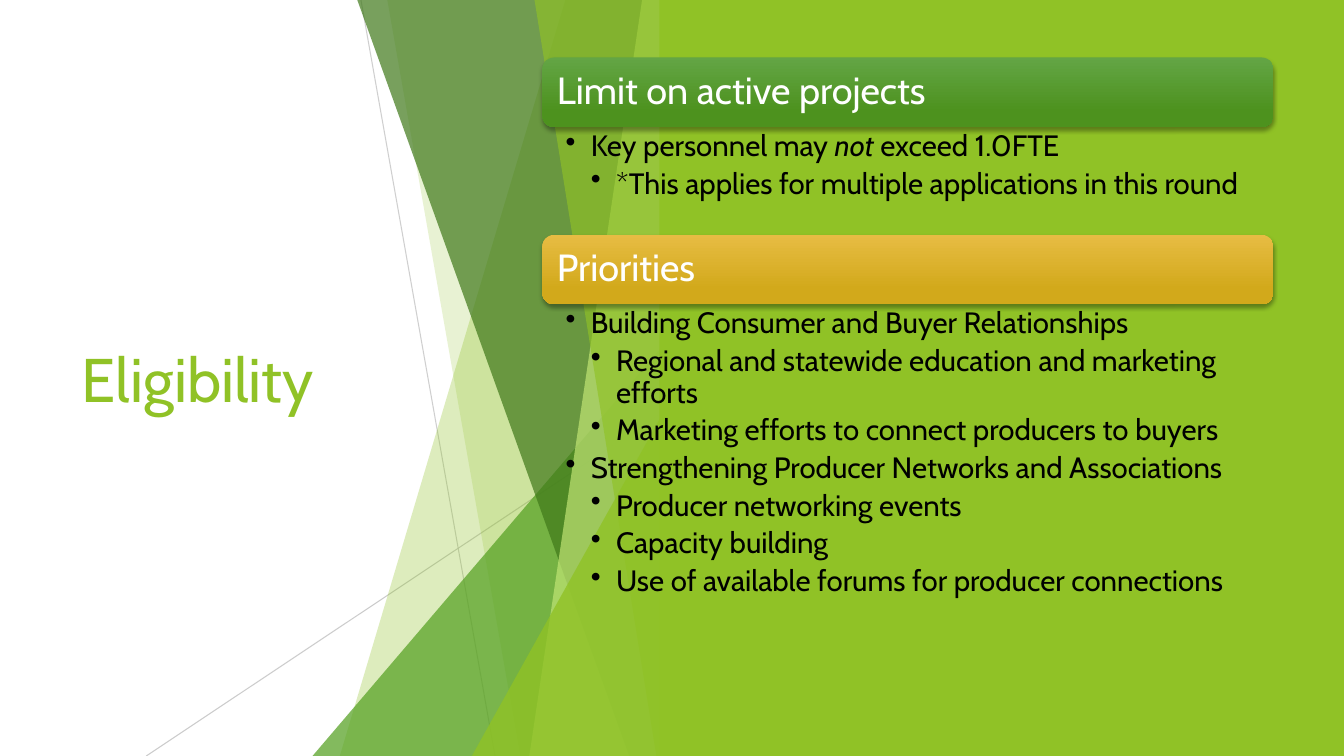
from dataclasses import dataclass

from lxml import etree
from pptx import Presentation
from pptx import util as u
from pptx.dml.color import RGBColor
from pptx.enum import shapes, text
from pptx.oxml import ns

COLOURS = {
    "lime": "90C226", "green": "54A021", "forest": "3F7819", "pale": "C0E474",
    "ray": "BFBFBF", "white": "FFFFFF", "black": "000000",
    "leaf_top": "63A545", "leaf_base": "4D921E",
    "gold_top": "E7BC43", "gold_base": "D2A91B",
}
FONT = "Cabin"
TOP, BOTTOM = -0.01, 7.5
PANEL_LEFT, PANEL_WIDTH, BAR_HEIGHT = 5.38, 7.25, 0.69


@dataclass
class Ray:
    start: tuple[float, float]
    end: tuple[float, float]
    opacity: int


@dataclass
class Facet:
    colour: str
    opacity: int
    top_left: float
    top_right: float
    bottom_right: float
    bottom_left: float


@dataclass
class Peak:
    colour: str
    opacity: int
    left: float
    top: float
    width: float


@dataclass
class Bullet:
    level: int
    wording: str
    emphasis: str = ""


@dataclass
class Section:
    heading: str
    top: float
    body_height: float
    shades: tuple[str, str]
    bullets: list[Bullet]


RAYS = [Ray((3.58, 0), (4.91, 7.5), 75), Ray((6.66, 4.03), (1.45, 7.5), 80)]
FACETS = [
    Facet("lime", 30, 5.61, 6.66, 6.66, 3.37),
    Facet("lime", 20, 3.84, 6.67, 6.67, 5.16),
    Peak("green", 72, 3.1, 3.33, 3.56),
    Facet("forest", 70, 3.54, 6.66, 6.66, 6.24),
    Facet("pale", 70, 6.37, 6.66, 6.66, 5.25),
    Facet("lime", 65, 5.3, 6.66, 6.66, 6.51),
    Peak("lime", 80, 4.68, 3.93, 1.99),
]
SECTIONS = [
    Section("Limit on active projects", 0.57, 1.07, ("leaf_top", "leaf_base"), [
        Bullet(1, "Key personnel may not exceed 1.0FTE", "not"),
        Bullet(2, "*This applies for multiple applications in this round"),
    ]),
    Section("Priorities", 2.33, 3.85, ("gold_top", "gold_base"), [
        Bullet(1, "Building Consumer and Buyer Relationships"),
        Bullet(2, "Regional and statewide education and marketing efforts"),
        Bullet(2, "Marketing efforts to connect producers to buyers"),
        Bullet(1, "Strengthening Producer Networks and Associations"),
        Bullet(2, "Producer networking events"),
        Bullet(2, "Capacity building"),
        Bullet(2, "Use of available forums for producer connections"),
    ]),
]


def rgb(name: str) -> RGBColor:
    return RGBColor.from_string(COLOURS[name])


def apply(target, values: dict) -> None:
    for key, value in values.items():
        setattr(target, key, value)


def add_node(parent, tag: str, **attributes):
    node = etree.SubElement(parent, ns.qn(tag))
    for key, value in attributes.items():
        node.set(key, str(value))
    return node


def set_opacity(element, opacity: int) -> None:
    colour = next(element.iter(ns.qn("a:srgbClr")))
    add_node(colour, "a:alpha", val=opacity * 1000)


def paint(shape, colour: str, opacity: int = 100) -> None:
    shape.shadow.inherit = False
    shape.line.fill.background()
    shape.fill.solid()
    shape.fill.fore_color.rgb = rgb(colour)
    if opacity < 100:
        set_opacity(shape.fill._xPr, opacity)


def write_run(paragraph, wording: str, size: float, colour: str, italic: bool = False) -> None:
    run = paragraph.add_run()
    run.text = wording
    apply(run.font, {"name": FONT, "size": u.Pt(size), "italic": italic})
    run.font.color.rgb = rgb(colour)


def draw_ray(slide, ray: Ray) -> None:
    ends = [u.Inches(value) for value in ray.start + ray.end]
    line = slide.shapes.add_connector(shapes.MSO_CONNECTOR.STRAIGHT, *ends)
    line.line.width = u.Pt(0.75)
    line.line.color.rgb = rgb("ray")
    properties = line._element.spPr
    set_opacity(properties, ray.opacity)
    add_node(properties, "a:effectLst")


def draw_facet(slide, facet: Facet | Peak) -> None:
    if isinstance(facet, Peak):
        box = (facet.left, facet.top, facet.width, BOTTOM - facet.top)
        shape = slide.shapes.add_shape(
            shapes.MSO_SHAPE.ISOSCELES_TRIANGLE, *map(u.Inches, box))
        shape.adjustments[0] = 1
    else:
        corners = [(facet.top_left, TOP), (facet.top_right, TOP),
                   (facet.bottom_right, BOTTOM), (facet.bottom_left, BOTTOM)]
        points = [(u.Inches(x), u.Inches(y)) for x, y in corners]
        outline = slide.shapes.build_freeform(*points[0])
        outline.add_line_segments(points[1:], close=True)
        shape = outline.convert_to_shape()
    paint(shape, facet.colour, facet.opacity)


def draw_bar(slide, section: Section) -> None:
    box = (PANEL_LEFT, section.top, PANEL_WIDTH, BAR_HEIGHT)
    bar = slide.shapes.add_shape(shapes.MSO_SHAPE.ROUNDED_RECTANGLE, *map(u.Inches, box))
    bar.shadow.inherit = False
    bar.line.fill.background()
    bar.fill.gradient()
    bar.fill.gradient_angle = 270
    for stop, position, shade in zip(bar.fill.gradient_stops, (0, 0.78), section.shades):
        stop.position = position
        stop.color.rgb = rgb(shade)
    effects = bar._element.spPr.find(ns.qn("a:effectLst"))
    shadow = add_node(effects, "a:outerShdw", blurRad=u.Pt(3), dist=u.Pt(2),
                      dir=5400000, rotWithShape=0)
    add_node(shadow, "a:srgbClr", val=COLOURS["black"])
    set_opacity(shadow, 35)
    apply(bar.text_frame, {
        "word_wrap": True, "vertical_anchor": text.MSO_ANCHOR.MIDDLE,
        "margin_left": u.Inches(0.11), "margin_right": u.Inches(0.11),
    })
    heading = bar.text_frame.paragraphs[0]
    apply(heading, {"alignment": text.PP_ALIGN.LEFT, "line_spacing": 0.9})
    write_run(heading, section.heading, 27, "white")


def draw_bullets(slide, section: Section) -> None:
    box = (PANEL_LEFT, section.top + BAR_HEIGHT, PANEL_WIDTH, section.body_height)
    frame = slide.shapes.add_textbox(*map(u.Inches, box)).text_frame
    apply(frame, {
        "word_wrap": True, "margin_left": u.Inches(0.23), "margin_right": u.Inches(0.21),
        "margin_top": u.Inches(0.04), "margin_bottom": u.Inches(0.04),
    })
    for index, bullet in enumerate(section.bullets):
        paragraph = frame.add_paragraph() if index else frame.paragraphs[0]
        apply(paragraph, {"level": bullet.level, "line_spacing": 0.9,
                          "space_after": u.Pt(4.2)})
        properties = paragraph._p.get_or_add_pPr()
        properties.set("marL", str(u.Inches(0.25 * bullet.level)))
        properties.set("indent", str(u.Inches(-0.25)))
        add_node(properties, "a:buChar", char="•")
        pieces = [bullet.wording]
        if bullet.emphasis:
            pieces = bullet.wording.partition(bullet.emphasis)
        for piece in pieces:
            write_run(paragraph, piece, 21, "black", piece == bullet.emphasis)


def main() -> None:
    deck = Presentation()
    apply(deck, {"slide_width": u.Inches(13.33), "slide_height": u.Inches(7.5)})
    slide = deck.slides.add_slide(deck.slide_layouts[5])
    title = slide.shapes.title
    apply(title, {"left": u.Inches(0.71), "top": u.Inches(1.51),
                  "width": u.Inches(3.88), "height": u.Inches(4.48)})
    apply(title.text_frame, {"word_wrap": True, "vertical_anchor": text.MSO_ANCHOR.MIDDLE})
    eligibility = title.text_frame.paragraphs[0]
    eligibility.alignment = text.PP_ALIGN.LEFT
    write_run(eligibility, "Eligibility", 44, "lime")
    for ray in RAYS:
        draw_ray(slide, ray)
    for facet in FACETS:
        draw_facet(slide, facet)
    backdrop = slide.shapes.add_shape(
        shapes.MSO_SHAPE.RECTANGLE, *map(u.Inches, (6.54, 0, 6.79, 7.5)))
    paint(backdrop, "lime")
    for section in SECTIONS:
        draw_bar(slide, section)
        draw_bullets(slide, section)
    deck.save("out.pptx")


if __name__ == "__main__":
    main()
